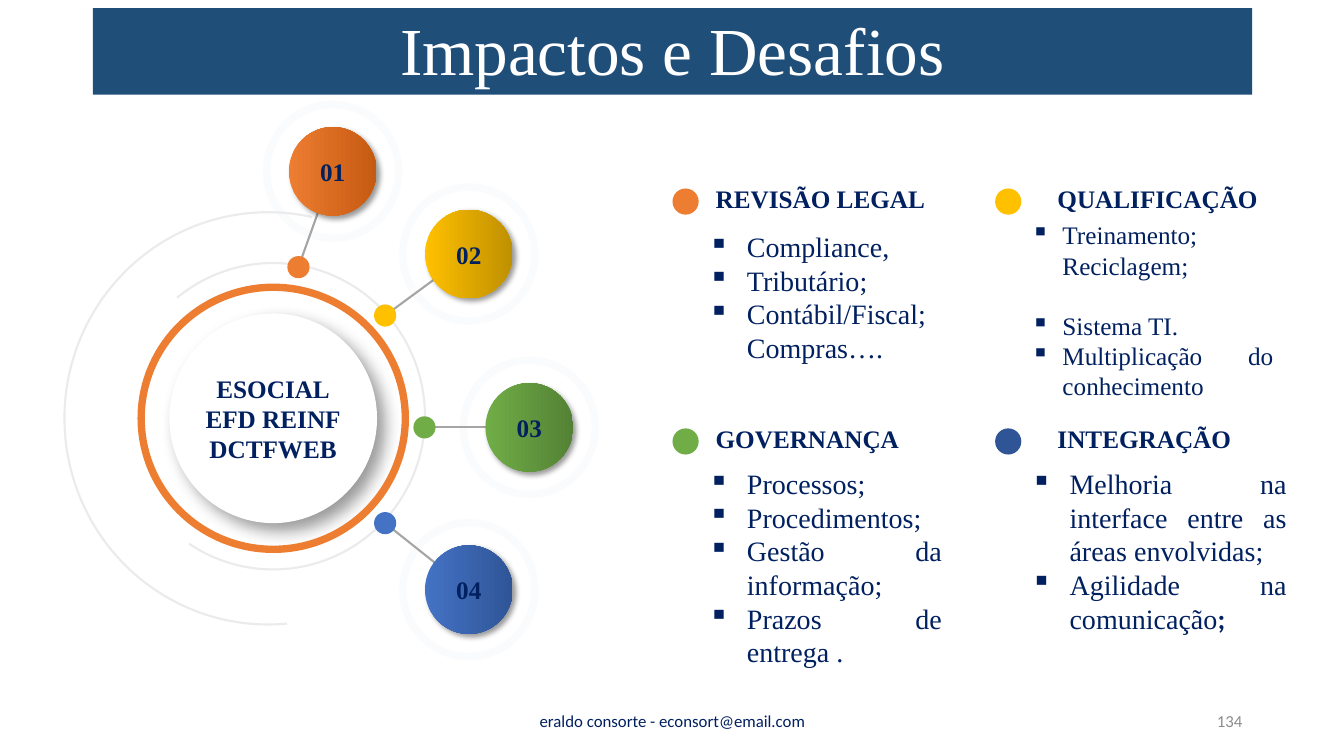
from dataclasses import dataclass

from lxml import etree
from pptx import Presentation
from pptx.dml.color import RGBColor
from pptx.enum.shapes import MSO_CONNECTOR, MSO_SHAPE
from pptx.enum.text import MSO_ANCHOR, MSO_AUTO_SIZE, PP_ALIGN
from pptx.oxml.ns import qn
from pptx.util import Inches, Pt

OVAL, ARC, RECTANGLE = MSO_SHAPE.OVAL, MSO_SHAPE.ARC, MSO_SHAPE.RECTANGLE
STRAIGHT = MSO_CONNECTOR.STRAIGHT
TOP, MIDDLE, BOTTOM = MSO_ANCHOR.TOP, MSO_ANCHOR.MIDDLE, MSO_ANCHOR.BOTTOM
LEFT, CENTER, RIGHT, JUSTIFY = PP_ALIGN.LEFT, PP_ALIGN.CENTER, PP_ALIGN.RIGHT, PP_ALIGN.JUSTIFY
NO_FIT = MSO_AUTO_SIZE.NONE


@dataclass(frozen=True)
class Theme:
    """Colours, fonts and type sizes of the slide."""
    serif: str = "Times New Roman"
    sans: str = "Calibri"
    title_size: int = 48
    heading_size: int = 18
    body_size: int = 20
    footer_size: int = 12
    banner: str = "1F4E79"
    navy: str = "002060"
    white: str = "FFFFFF"
    gray: str = "8C8C8C"
    link: str = "A5A5A5"
    arc: str = "EBEBEB"
    halo: str = "FAFBFD"
    orange: str = "ED7D31"
    gold: str = "FFC000"
    green: str = "70AD47"
    blue: str = "4472C4"
    dark_orange: str = "C55A11"
    dark_gold: str = "BF9000"
    dark_green: str = "548235"
    dark_blue: str = "2F5597"


THEME = Theme()


@dataclass(frozen=True)
class Satellite:
    """A numbered bubble and its dot, as centres within the diagram box."""
    bubble: tuple
    dot: tuple
    color: str
    shade: str


@dataclass(frozen=True)
class Topic:
    """A heading with its bullets as (text, space after) pairs."""
    heading: str
    color: str
    bullets: tuple
    heading_gap: float
    body_gap: float
    body_width: float
    size: int = THEME.body_size
    indent: float = 0.38


SATELLITES = (
    Satellite((2.66, 0.67), (2.32, 1.62), THEME.orange, THEME.dark_orange),
    Satellite((4.01, 1.49), (3.18, 2.1), THEME.gold, THEME.dark_gold),
    Satellite((4.61, 3.21), (3.57, 3.21), THEME.green, THEME.dark_green),
    Satellite((4.01, 4.82), (3.18, 4.16), THEME.blue, THEME.dark_blue),
)
TOPICS = (
    Topic("REVISÃO LEGAL", THEME.orange,
          (("Compliance,", 0), ("Tributário;", 0), ("Contábil/Fiscal; Compras….", 0)),
          0.33, 0.36, 2.47),
    Topic("QUALIFICAÇÃO", THEME.gold,
          (("Treinamento; Reciclagem;", 21.5), ("Sistema TI.", 0),
           ("Multiplicação do conhecimento", 0)),
          0.52, 0.26, 2.6, THEME.heading_size, 0.31),
    Topic("GOVERNANÇA", THEME.green,
          (("Processos;", 0), ("Procedimentos;", 0), ("Gestão da informação;", 0),
           ("Prazos de entrega .", 0)),
          0.33, 0.33, 2.51),
    Topic("INTEGRAÇÃO", THEME.dark_blue,
          (("Melhoria na interface entre as áreas envolvidas;", 0),
           ("Agilidade na comunicação", 0)),
          0.52, 0.33, 2.73),
)


def rgb(code):
    """Return the colour for a hex code."""
    return RGBColor.from_string(code)


def add_span(para, text, size, color=THEME.navy, bold=False, font=THEME.serif):
    """Append one formatted run."""
    span = para.add_run()
    span.text = text
    span.font.size, span.font.name, span.font.bold = Pt(size), font, bold
    span.font.color.rgb = rgb(color)


def add_effects(props, blur=0, distance=0):
    """Give shape properties a diagonal shadow, or none when there is no blur."""
    effects = etree.SubElement(props, qn("a:effectLst"))
    if blur:
        shadow = etree.SubElement(effects, qn("a:outerShdw"), blurRad=str(Pt(blur)),
                                  dist=str(Pt(distance)), dir="2700000", algn="tl",
                                  rotWithShape="0")
        black = etree.SubElement(shadow, qn("a:srgbClr"), val="000000")
        etree.SubElement(black, qn("a:alpha"), val="40000")


def add_round(page, kind, center, width, height, fill=None, line=None, weight=0):
    """Add an oval or arc around a centre."""
    shape = page.shapes.add_shape(kind, Inches(center[0] - width / 2),
                                  Inches(center[1] - height / 2), Inches(width), Inches(height))
    shape.shadow.inherit = False
    if fill:
        shape.fill.solid()
        shape.fill.fore_color.rgb = rgb(fill)
    else:
        shape.fill.background()
    if line:
        shape.line.color.rgb = rgb(line)
        shape.line.width = Pt(weight)
    else:
        shape.line.fill.background()
    return shape


def cast_shadow(shape, blur, distance):
    """Replace the empty effects of a shape with a shadow."""
    props = shape.element.spPr
    props.remove(props.find(qn("a:effectLst")))
    add_effects(props, blur, distance)


def label_shape(shape, lines):
    """Write centred bold lines inside a shape."""
    frame = shape.text_frame
    frame.word_wrap, frame.vertical_anchor = False, MIDDLE
    for number, line in enumerate(lines):
        para = frame.add_paragraph() if number else frame.paragraphs[0]
        para.alignment = CENTER
        add_span(para, line, THEME.heading_size, bold=True)


def add_box(page, left, top, width, height, anchor=TOP, align=LEFT, wrap=True):
    """Add a text box and return its frame."""
    box = page.shapes.add_textbox(Inches(left), Inches(top), Inches(width), Inches(height))
    frame = box.text_frame
    frame.word_wrap, frame.vertical_anchor = wrap, anchor
    frame.paragraphs[0].alignment = align
    return frame


def build_title(page, left, top, width, height):
    """Turn the title placeholder into the banner."""
    title = page.shapes.title
    title.left, title.top = Inches(left), Inches(top)
    title.width, title.height = Inches(width), Inches(height)
    title.fill.solid()
    title.fill.fore_color.rgb = rgb(THEME.banner)
    frame = title.text_frame
    frame.auto_size, frame.vertical_anchor = NO_FIT, BOTTOM
    para = frame.paragraphs[0]
    para.alignment, para.line_spacing = CENTER, 0.9
    add_span(para, "Impactos e Desafios", THEME.title_size, THEME.white)


def build_diagram(page, left, top):
    """Draw the hub with its arcs, links and numbered bubbles."""
    def place(point):
        return left + point[0], top + point[1]

    hub_center = place((2.07, 3.12))
    for item in SATELLITES:
        add_round(page, OVAL, place(item.bubble), 1.31, 1.33, line=THEME.halo, weight=5.25)
    for item in SATELLITES:
        ends = [Inches(value) for value in place(item.dot) + place(item.bubble)]
        link = page.shapes.add_connector(STRAIGHT, *ends)
        link.line.color.rgb = rgb(THEME.link)
        link.line.width = Pt(1.5)
        add_effects(link.element.spPr)
    for center, width, height, start, end in (((2.07, 3.1), 3.01, 3.04, 230.9, 123.4),
                                              ((2.02, 3.12), 4.04, 4.09, 84.7, 282.3)):
        arc = add_round(page, ARC, place(center), width, height, line=THEME.arc, weight=1.5)
        arc.adjustments[0], arc.adjustments[1] = start * 0.6, end * 0.6
    hub = add_round(page, OVAL, hub_center, 2.06, 2.08, THEME.white)
    cast_shadow(hub, 12, 8)
    label_shape(hub, ("ESOCIAL", "EFD REINF", "DCTFWEB"))
    for number, item in enumerate(SATELLITES, 1):
        add_round(page, OVAL, place(item.dot), 0.22, 0.22, item.color)
        bubble = add_round(page, OVAL, place(item.bubble), 0.87, 0.88)
        bubble.fill.gradient()
        bubble.fill.gradient_angle = 0
        for stop, color in zip(bubble.fill.gradient_stops, (item.color, item.shade)):
            stop.color.rgb = rgb(color)
        cast_shadow(bubble, 4, 3)
        label_shape(bubble, (f"{number:02}",))
    add_round(page, OVAL, hub_center, 2.62, 2.6, line=THEME.orange, weight=5.25)


def build_topic(page, topic, left, top):
    """Place a dot, heading and bullet list from the dot's corner."""
    add_round(page, OVAL, (left + 0.13, top + 0.13), 0.26, 0.26, topic.color)
    heading = add_box(page, left + topic.heading_gap, top - 0.1, 2.36, 0.44, wrap=False)
    add_span(heading.paragraphs[0], topic.heading, THEME.heading_size, bold=True)
    body = add_box(page, left + 0.26, top + topic.body_gap, topic.body_width, 1.9)
    for number, (text, gap) in enumerate(topic.bullets):
        para = body.add_paragraph() if number else body.paragraphs[0]
        para.alignment, para.space_after = JUSTIFY, Pt(gap)
        props = para._p.get_or_add_pPr()
        props.set("marL", str(Inches(topic.indent)))
        props.set("indent", str(-Inches(topic.indent)))
        etree.SubElement(props, qn("a:buChar"), char="▪")
        add_span(para, text, topic.size)
    if topic.heading == "INTEGRAÇÃO":
        add_span(body.paragraphs[-1], ";", topic.size, bold=True, font=THEME.sans)


def build_footer(page, top):
    """Write the contact line and the page number."""
    for left, width, align, text, color in (
            (4.42, 4.5, CENTER, "eraldo consorte - econsort@email.com", THEME.navy),
            (9.42, 3, RIGHT, "134", THEME.gray)):
        frame = add_box(page, left, top, width, 0.4, MIDDLE, align)
        add_span(frame.paragraphs[0], text, THEME.footer_size, color, font=THEME.sans)


def main():
    """Build and save the deck."""
    deck = Presentation()
    deck.slide_width, deck.slide_height = Inches(13.33), Inches(7.5)
    page = deck.slides.add_slide(deck.slide_layouts[5])
    build_title(page, 0.92, 0.08, 11.5, 0.86)
    build_diagram(page, 0.64, 1.03)
    for index, topic in enumerate(TOPICS):
        row, column = divmod(index, 2)
        build_topic(page, topic, 6.67 + 3.2 * column, 1.87 + 2.38 * row)
    build_footer(page, 6.95)
    deck.save("out.pptx")


if __name__ == "__main__":
    main()
